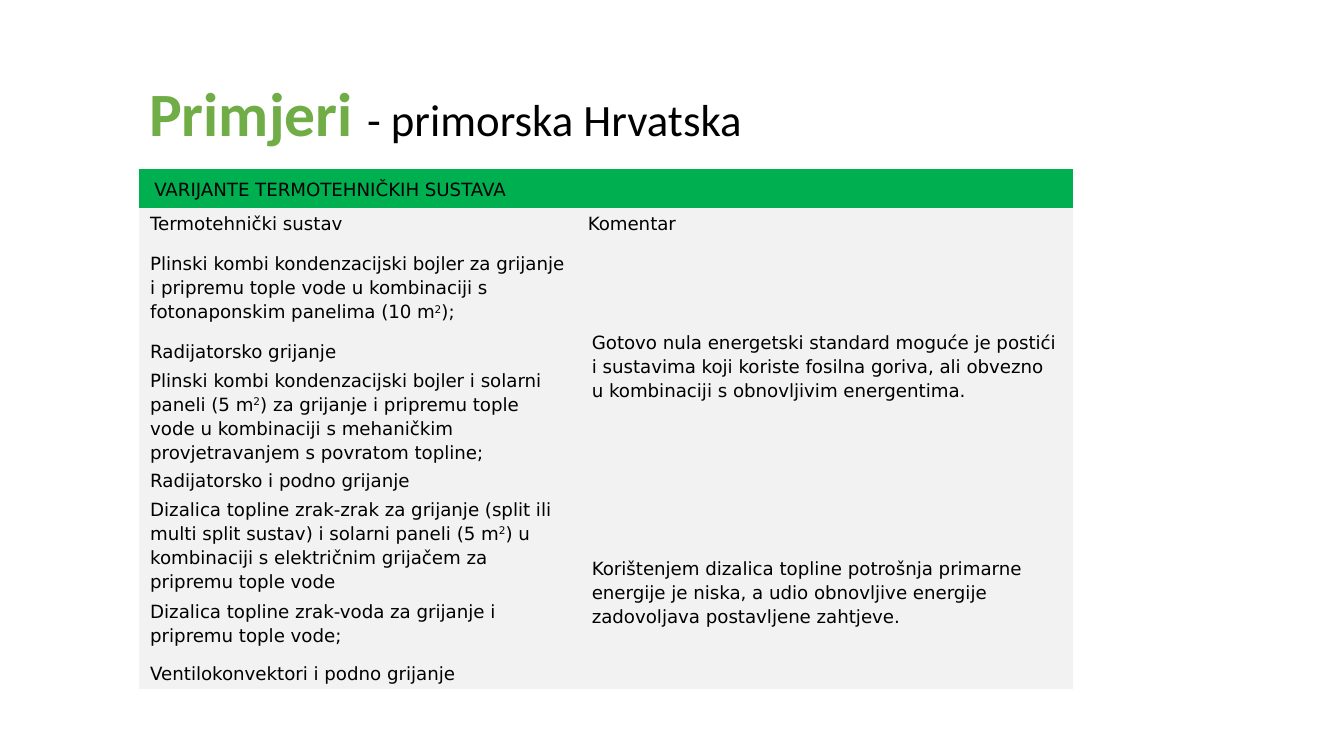
from dataclasses import dataclass
from typing import Any

from pptx import Presentation
from pptx import util as u
from pptx.dml.color import RGBColor
from pptx.enum import text
from pptx.oxml.ns import qn


@dataclass(frozen=True)
class Theme:
    green: str = "70AD47"
    header: str = "00B050"
    body: str = "F2F2F2"
    ink: str = "000000"
    title_font: str = "Calibri"
    table_font: str = "DejaVu Sans"
    title_size: int = 44
    subtitle_size: int = 32
    table_size: int = 13
    plain_table: str = "{2D5ABB26-0587-4C30-8999-92F81FD0307C}"


@dataclass(frozen=True)
class Entry:
    row: int
    column: int
    paragraphs: tuple[str, ...]
    rows: int = 1
    columns: int = 1
    roomy: bool = False


THEME = Theme()
COLUMN_WIDTHS = (4.34, 4.92)
ROW_HEIGHTS = (0.29, 0.29, 0.99, 0.29, 0.99, 0.29, 0.99, 0.94)
ENTRIES = (
    Entry(0, 0, ("VARIJANTE TERMOTEHNIČKIH SUSTAVA",), columns=2, roomy=True),
    Entry(1, 0, ("Termotehnički sustav",)),
    Entry(1, 1, ("Komentar",)),
    Entry(2, 0, ("Plinski kombi kondenzacijski bojler za grijanje i pripremu tople vode "
                 "u kombinaciji s fotonaponskim panelima (10 m²);",)),
    Entry(2, 1, ("Gotovo nula energetski standard moguće je postići i sustavima koji koriste "
                 "fosilna goriva, ali obvezno u kombinaciji s obnovljivim energentima.",),
          rows=4, roomy=True),
    Entry(3, 0, ("Radijatorsko grijanje",)),
    Entry(4, 0, ("Plinski kombi kondenzacijski bojler i solarni paneli (5 m²) za grijanje i "
                 "pripremu tople vode u kombinaciji s mehaničkim provjetravanjem s povratom "
                 "topline;",)),
    Entry(5, 0, ("Radijatorsko i podno grijanje",)),
    Entry(6, 0, ("Dizalica topline zrak-zrak za grijanje (split ili multi split sustav) i "
                 "solarni paneli (5 m²) u kombinaciji s električnim grijačem za pripremu "
                 "tople vode",)),
    Entry(6, 1, ("Korištenjem dizalica topline potrošnja primarne energije je niska, a udio "
                 "obnovljive energije zadovoljava postavljene zahtjeve.",), rows=2, roomy=True),
    Entry(7, 0, ("Dizalica topline zrak-voda za grijanje i pripremu tople vode;",
                 "Ventilokonvektori i podno grijanje")),
)


def apply(target: Any, values: dict[str, Any]) -> None:
    for name, value in values.items():
        setattr(target, name, value)


def add_span(para: Any, words: str, font: str, size: int, color: str,
             bold: bool = False) -> Any:
    span = para.add_run()
    span.text = words
    apply(span.font, {"name": font, "size": u.Pt(size), "bold": bold})
    span.font.color.rgb = RGBColor.from_string(color)
    return span


def add_title(page: Any) -> None:
    title = page.shapes.title
    apply(title, {"left": u.Inches(1.38), "top": u.Inches(0.67),
                  "width": u.Inches(11.19), "height": u.Inches(0.75)})
    box = title.text_frame
    apply(box, {"word_wrap": True, "auto_size": text.MSO_AUTO_SIZE.NONE,
                "vertical_anchor": text.MSO_ANCHOR.TOP, "margin_top": u.Inches(0.07)})
    para = box.paragraphs[0]
    apply(para, {"alignment": text.PP_ALIGN.LEFT, "line_spacing": 1.0})
    add_span(para, "Primjeri ", THEME.title_font, THEME.title_size, THEME.green, True)
    add_span(para, "- primorska Hrvatska", THEME.title_font, THEME.subtitle_size, THEME.ink)


def fill_cell(cell: Any, entry: Entry) -> None:
    side, edge = (0.15, 0.07) if entry.roomy else (0.11, 0)
    apply(cell, {"margin_left": u.Inches(side), "margin_right": u.Inches(side),
                 "margin_top": u.Inches(edge), "margin_bottom": u.Inches(edge),
                 "vertical_anchor": text.MSO_ANCHOR.MIDDLE})
    for index, words in enumerate(entry.paragraphs):
        box = cell.text_frame
        para = box.add_paragraph() if index else box.paragraphs[0]
        apply(para, {"line_spacing": 1.15, "space_after": u.Pt(10)})
        # The square sign becomes a raised digit
        before, square, after = words.partition("²")
        for piece in (before, square, after):
            if piece:
                span = add_span(para, "2" if piece == "²" else piece,
                                THEME.table_font, THEME.table_size, THEME.ink)
                if piece == "²":
                    span.font._element.set("baseline", "30000")


def add_systems_table(page: Any) -> None:
    frame = page.shapes.add_table(
        len(ROW_HEIGHTS), len(COLUMN_WIDTHS), u.Inches(1.38), u.Inches(1.68),
        u.Inches(sum(COLUMN_WIDTHS)), u.Inches(sum(ROW_HEIGHTS)))
    table = frame.table
    apply(table, {"first_row": False, "horz_banding": False})
    next(frame._element.iter(qn("a:tableStyleId"))).text = THEME.plain_table
    for column, width in zip(table.columns, COLUMN_WIDTHS):
        column.width = u.Inches(width)
    for index, (row, height) in enumerate(zip(table.rows, ROW_HEIGHTS)):
        row.height = u.Inches(height)
        for cell in row.cells:
            cell.fill.solid()
            cell.fill.fore_color.rgb = RGBColor.from_string(
                THEME.body if index else THEME.header)
    for entry in ENTRIES:
        cell = table.cell(entry.row, entry.column)
        if entry.rows > 1 or entry.columns > 1:
            cell.merge(table.cell(entry.row + entry.rows - 1,
                                  entry.column + entry.columns - 1))
        fill_cell(cell, entry)
    # Small type keeps the covered cells from stretching their rows
    for cell in table.iter_cells():
        if cell.is_spanned:
            cell.text_frame.paragraphs[0].font.size = u.Pt(THEME.table_size)


def main() -> None:
    deck = Presentation()
    apply(deck, {"slide_width": u.Inches(13.33), "slide_height": u.Inches(7.5)})
    page = deck.slides.add_slide(deck.slide_layouts.get_by_name("Title Only"))
    add_title(page)
    add_systems_table(page)
    deck.save("out.pptx")


if __name__ == "__main__":
    main()
